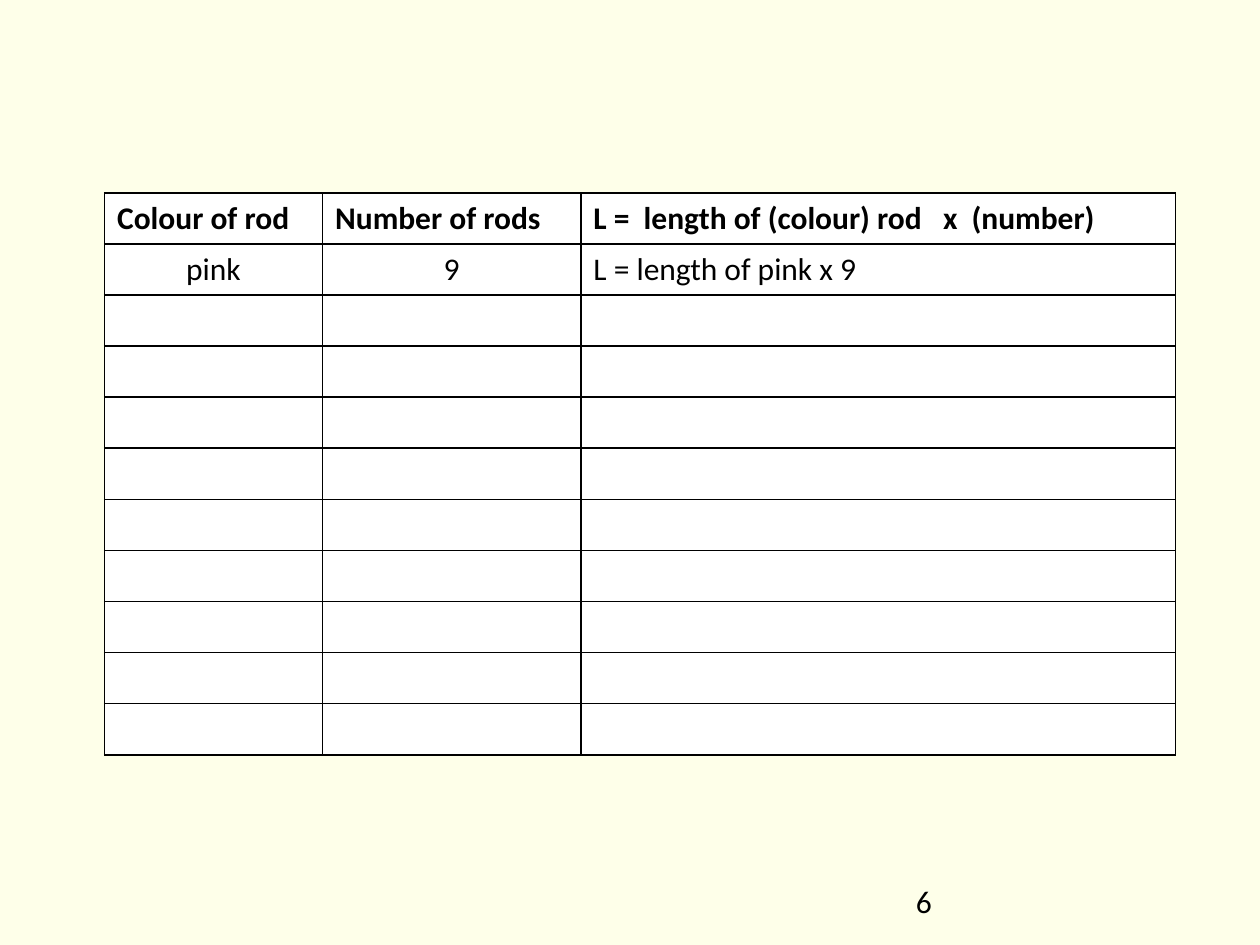
from lxml import etree
from pptx import Presentation
from pptx.dml.color import RGBColor
from pptx.enum.text import PP_ALIGN
from pptx.oxml.ns import qn
from pptx.util import Inches, Pt

LEFT, CENTER = PP_ALIGN.LEFT, PP_ALIGN.CENTER
CREAM = RGBColor(0xFE, 0xFF, 0xE9)
WHITE = RGBColor(0xFF, 0xFF, 0xFF)
BLACK = RGBColor(0x00, 0x00, 0x00)
WIDTH, HEIGHT = Inches(10), Inches(7.5)
ROW_COUNT = 11
COLUMN_SHARES = (0.173, 0.205, 0.472)
COLUMN_ALIGNS = (CENTER, CENTER, LEFT)
ROD_ROWS = (
    ("Colour of rod", "Number of rods", "L =  length of (colour) rod   x  (number)"),
    ("pink", "9", "L = length of pink x 9"),
)


class SlideBuilder:
    """Hold the style and the current slide; place elements by shares of its size."""

    font, size, border = "Calibri", Pt(18), Pt(1)

    def __init__(self, prs):
        self.s = prs.slides.add_slide(prs.slide_layouts[6])
        fill = self.s.background.fill
        fill.solid()
        fill.fore_color.rgb = CREAM

    def box(self, x, y, w, h):
        return int(x * WIDTH), int(y * HEIGHT), int(w * WIDTH), int(h * HEIGHT)

    def set_text(self, tf, text, align=LEFT, bold=False):
        tf.text = text
        p = tf.paragraphs[0]
        p.alignment = align
        for r in p.runs:
            r.font.name, r.font.size, r.font.bold = self.font, self.size, bold
            r.font.color.rgb = BLACK

    def style_cell(self, cell):
        tc_pr = cell._tc.get_or_add_tcPr()
        for side in ("lnL", "lnR", "lnT", "lnB"):
            ln = etree.SubElement(tc_pr, qn(f"a:{side}"), w=str(self.border))
            fill = etree.SubElement(ln, qn("a:solidFill"))
            etree.SubElement(fill, qn("a:srgbClr"), val=str(BLACK))
        cell.fill.solid()
        cell.fill.fore_color.rgb = WHITE

    def table(self, x, y, h, shares, row_count, rows, aligns):
        frame = self.s.shapes.add_table(
            row_count, len(shares), *self.box(x, y, sum(shares), h))
        table = frame.table
        for column, share in zip(table.columns, shares):
            column.width = int(share * WIDTH)
        for cell in table.iter_cells():
            self.style_cell(cell)
        for i, row in enumerate(rows):
            for j, text in enumerate(row):
                align = aligns[j] if i else LEFT
                self.set_text(table.cell(i, j).text_frame, text, align, bold=i == 0)

    def text(self, x, y, w, h, text):
        tf = self.s.shapes.add_textbox(*self.box(x, y, w, h)).text_frame
        tf.word_wrap = True
        self.set_text(tf, text)


def main():
    prs = Presentation()
    prs.slide_width, prs.slide_height = WIDTH, HEIGHT
    slide = SlideBuilder(prs)
    slide.table(0.083, 1.53 / 7.5, 4.46 / 7.5, COLUMN_SHARES, ROW_COUNT,
                ROD_ROWS, COLUMN_ALIGNS)
    slide.text(0.717, 6.95 / 7.5, 0.233, 0.4 / 7.5, "6")
    prs.save("out.pptx")


if __name__ == "__main__":
    main()
